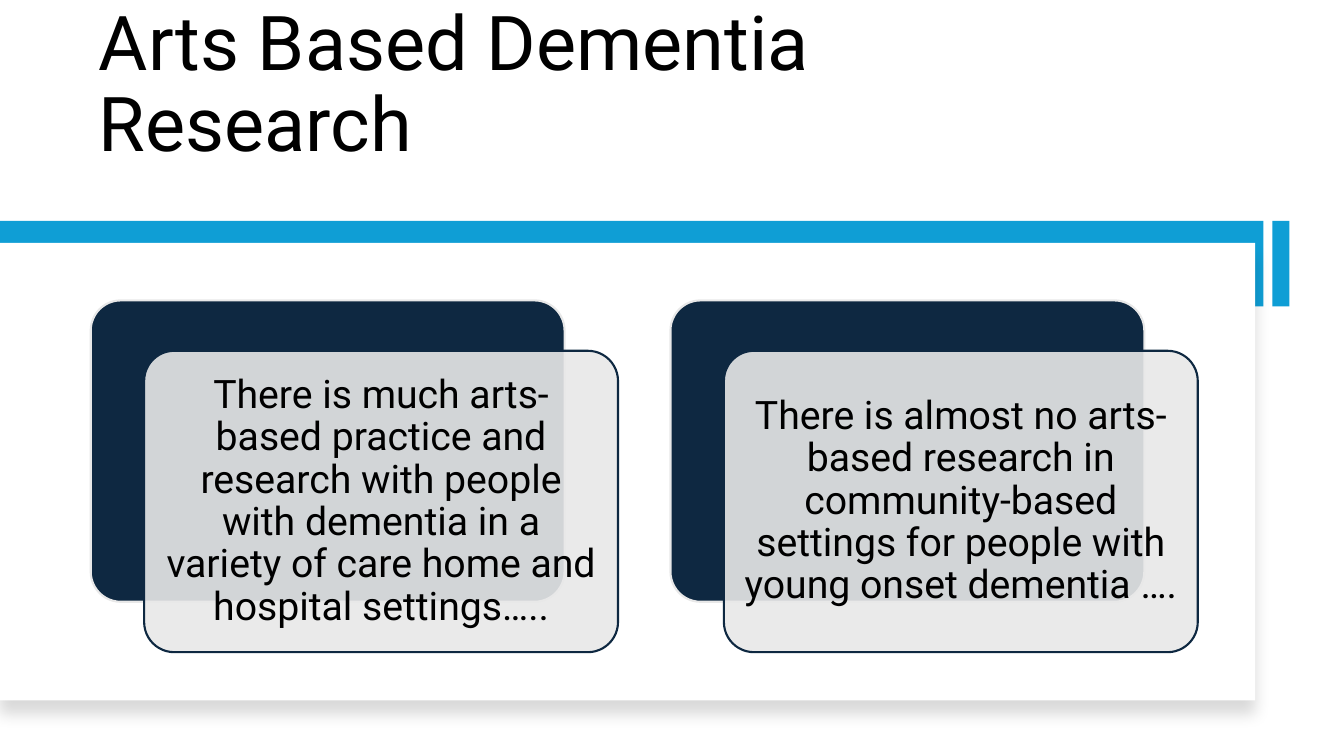
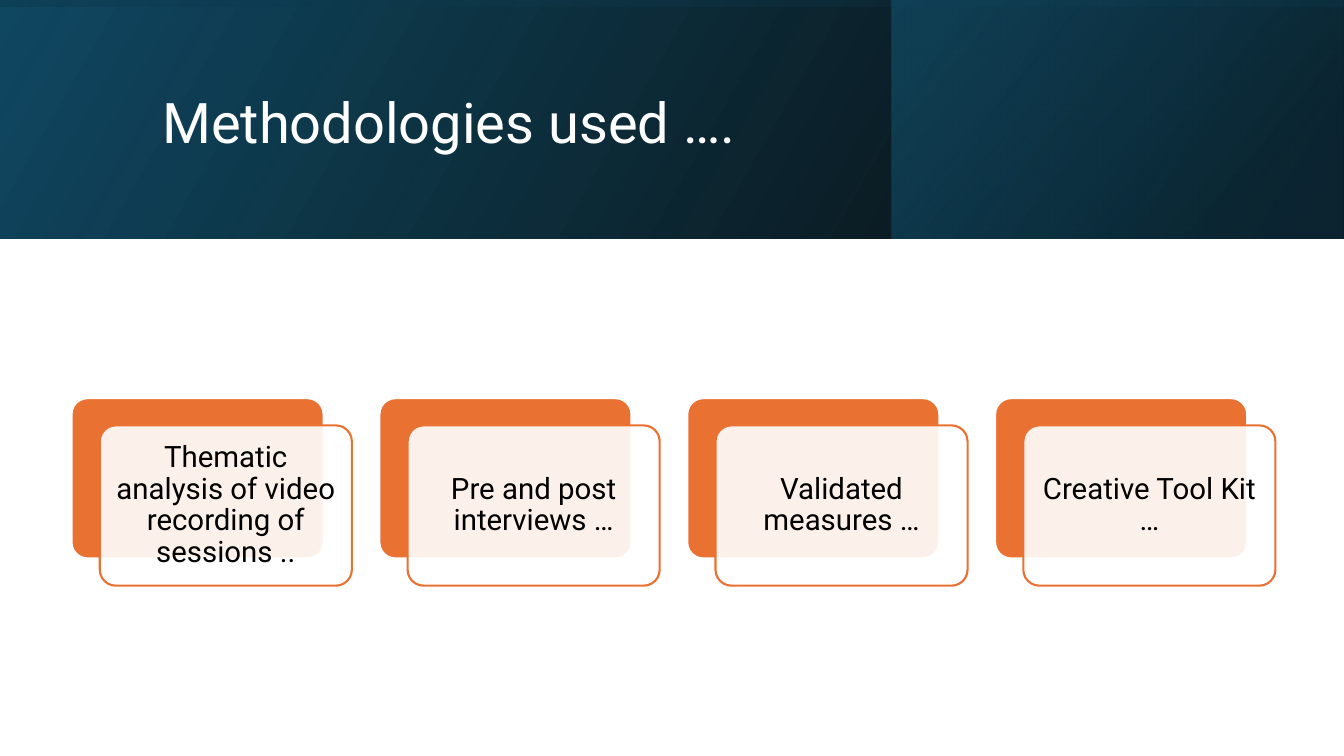
import dataclasses

import lxml.etree
import pptx
import pptx.dml.color
import pptx.enum.shapes
import pptx.enum.text
import pptx.oxml.ns
import pptx.util

Inches = pptx.util.Inches
Pt = pptx.util.Pt
SHAPES = pptx.enum.shapes.MSO_SHAPE
ALIGN = pptx.enum.text.PP_ALIGN
ANCHOR = pptx.enum.text.MSO_ANCHOR
qn = pptx.oxml.ns.qn


@dataclasses.dataclass(frozen=True)
class Theme:
    font: str = "Roboto"
    black: str = "000000"
    white: str = "FFFFFF"
    grey: str = "E8E8E8"
    navy: str = "0E2841"
    sky: str = "0F9ED5"
    orange: str = "E97132"
    teal: str = "156082"
    teal_dark: str = "104862"
    teal_deep: str = "0B3041"
    large_title: int = 54
    title: int = 40
    large_card: int = 28
    card: int = 21
    outline: float = 1.5
    card_opacity: int = 90
    line_spacing: float = 0.9


@dataclasses.dataclass(frozen=True)
class CardStyle:
    back: str
    back_line: str
    front: str
    size: tuple
    offset: tuple
    text_size: int


THEME = Theme()


def rgb(value):
    return pptx.dml.color.RGBColor.from_string(value)


def set_opacity(color_element, percent):
    alpha = lxml.etree.SubElement(color_element, qn("a:alpha"))
    alpha.set("val", str(percent * 1000))


def add_block(slide, box, kind=SHAPES.RECTANGLE, fill=None, line=None):
    shape = slide.shapes.add_shape(kind, *(Inches(length) for length in box))
    shape.shadow.inherit = False
    if fill:
        shape.fill.solid()
        shape.fill.fore_color.rgb = rgb(fill)
    if line:
        shape.line.color.rgb = rgb(line)
        shape.line.width = Pt(THEME.outline)
    else:
        shape.line.fill.background()
    return shape


def add_gradient_band(slide, box, angle, stops, rotation=0):
    band = add_block(slide, box)
    band.rotation = rotation
    band._element.spPr.find(qn("a:xfrm")).set("flipH", "1")
    band.fill.gradient()
    band.fill.gradient_angle = angle
    for stop, (position, color, opacity) in zip(band.fill.gradient_stops, stops):
        stop.position = position
        stop.color.rgb = rgb(color)
    colors = band._element.spPr.iterfind(".//" + qn("a:gs") + "/" + qn("a:srgbClr"))
    for color_element, (position, color, opacity) in zip(colors, stops):
        set_opacity(color_element, opacity)


def add_drop_shadow(shape):
    effects = shape._element.spPr.find(qn("a:effectLst"))
    shadow = lxml.etree.SubElement(effects, qn("a:outerShdw"))
    shadow.set("blurRad", str(Pt(11)))
    shadow.set("dist", str(Pt(10)))
    shadow.set("dir", str(90 * 60000))
    shadow.set("algn", "t")
    shadow.set("rotWithShape", "0")
    color_element = lxml.etree.SubElement(shadow, qn("a:srgbClr"))
    color_element.set("val", THEME.black)
    set_opacity(color_element, 15)


def write_text(frame, text, size, color, alignment, anchor):
    frame.text = text
    frame.word_wrap = True
    frame.auto_size = pptx.enum.text.MSO_AUTO_SIZE.NONE
    frame.vertical_anchor = anchor
    paragraph = frame.paragraphs[0]
    paragraph.alignment = alignment
    paragraph.line_spacing = THEME.line_spacing
    paragraph.font.name = THEME.font
    paragraph.font.size = Pt(size)
    paragraph.font.color.rgb = rgb(color)


def set_title(slide, text, box, size, color, anchor):
    title = slide.shapes.title
    title.left, title.top, title.width, title.height = (Inches(length) for length in box)
    write_text(title.text_frame, text, size, color, ALIGN.LEFT, anchor)
    slide.shapes._spTree.append(title._element)


def add_card(slide, left, top, text, style):
    shift_x, shift_y = style.offset
    back_box = (left, top, *style.size)
    front_box = (left + shift_x, top + shift_y, *style.size)
    back = add_block(slide, back_box, SHAPES.ROUNDED_RECTANGLE, style.back, style.back_line)
    front = add_block(slide, front_box, SHAPES.ROUNDED_RECTANGLE, style.front, style.back)
    for shape in (back, front):
        shape.adjustments[0] = 0.1
    fill = front._element.spPr.find(qn("a:solidFill"))
    set_opacity(fill.find(qn("a:srgbClr")), THEME.card_opacity)
    frame = front.text_frame
    frame.margin_left = frame.margin_right = Inches(0.09)
    frame.margin_top = frame.margin_bottom = Inches(0.09)
    write_text(frame, text, style.text_size, THEME.black, ALIGN.CENTER, ANCHOR.MIDDLE)


def add_card_row(slide, first_left, last_left, top, texts, style):
    step = (last_left - first_left) / (len(texts) - 1)
    for index, text in enumerate(texts):
        add_card(slide, first_left + index * step, top, text, style)


def add_research_slide(presentation):
    slide = presentation.slides.add_slide(presentation.slide_layouts[5])
    add_block(slide, (12.62, 2.19, 0.17, 0.85), fill=THEME.sky)
    add_block(slide, (0, 2.19, 12.53, 0.85), fill=THEME.sky)
    panel = add_block(slide, (0, 2.41, 12.45, 4.54), fill=THEME.white)
    add_drop_shadow(panel)
    set_title(slide, "Arts Based Dementia Research", (0.88, 0.42, 10.1, 1.3),
              THEME.large_title, THEME.black, ANCHOR.BOTTOM)
    style = CardStyle(THEME.navy, THEME.grey, THEME.grey, (4.7, 2.99), (0.53, 0.5),
                      THEME.large_card)
    add_card_row(slide, 0.9, 6.65, 2.98, [
        "There is much arts-based practice and research with people with dementia "
        "in a variety of care home and hospital settings…..",
        "There is almost no arts- based research in community-based settings "
        "for people with young onset dementia ….",
    ], style)


def add_methods_slide(presentation):
    slide = presentation.slides.add_slide(presentation.slide_layouts[5])
    add_gradient_band(slide, (0, 0, 13.33, 2.37), 30,
                      [(0, THEME.black, 96), (1, THEME.teal_dark, 100)])
    add_gradient_band(slide, (8.84, 0, 4.48, 2.37), 40,
                      [(0.19, THEME.teal_deep, 68), (1, THEME.teal, 48)])
    add_gradient_band(slide, (5.48, -5.48, 2.37, 13.33), 10,
                      [(0.23, THEME.teal_dark, 16), (0.99, THEME.black, 45)], rotation=270)
    set_title(slide, "Methodologies used ….", (1.51, 0.38, 10.63, 1.72),
              THEME.title, THEME.white, ANCHOR.MIDDLE)
    style = CardStyle(THEME.orange, THEME.white, THEME.white, (2.5, 1.59), (0.28, 0.27),
                      THEME.card)
    add_card_row(slide, 0.71, 9.87, 3.95, [
        "Thematic analysis of video recording of sessions ..",
        "Pre and post interviews …",
        "Validated measures …",
        "Creative Tool Kit …",
    ], style)


def main():
    presentation = pptx.Presentation()
    presentation.slide_width = Inches(13.33)
    presentation.slide_height = Inches(7.5)
    add_research_slide(presentation)
    add_methods_slide(presentation)
    presentation.save("out.pptx")


if __name__ == "__main__":
    main()
